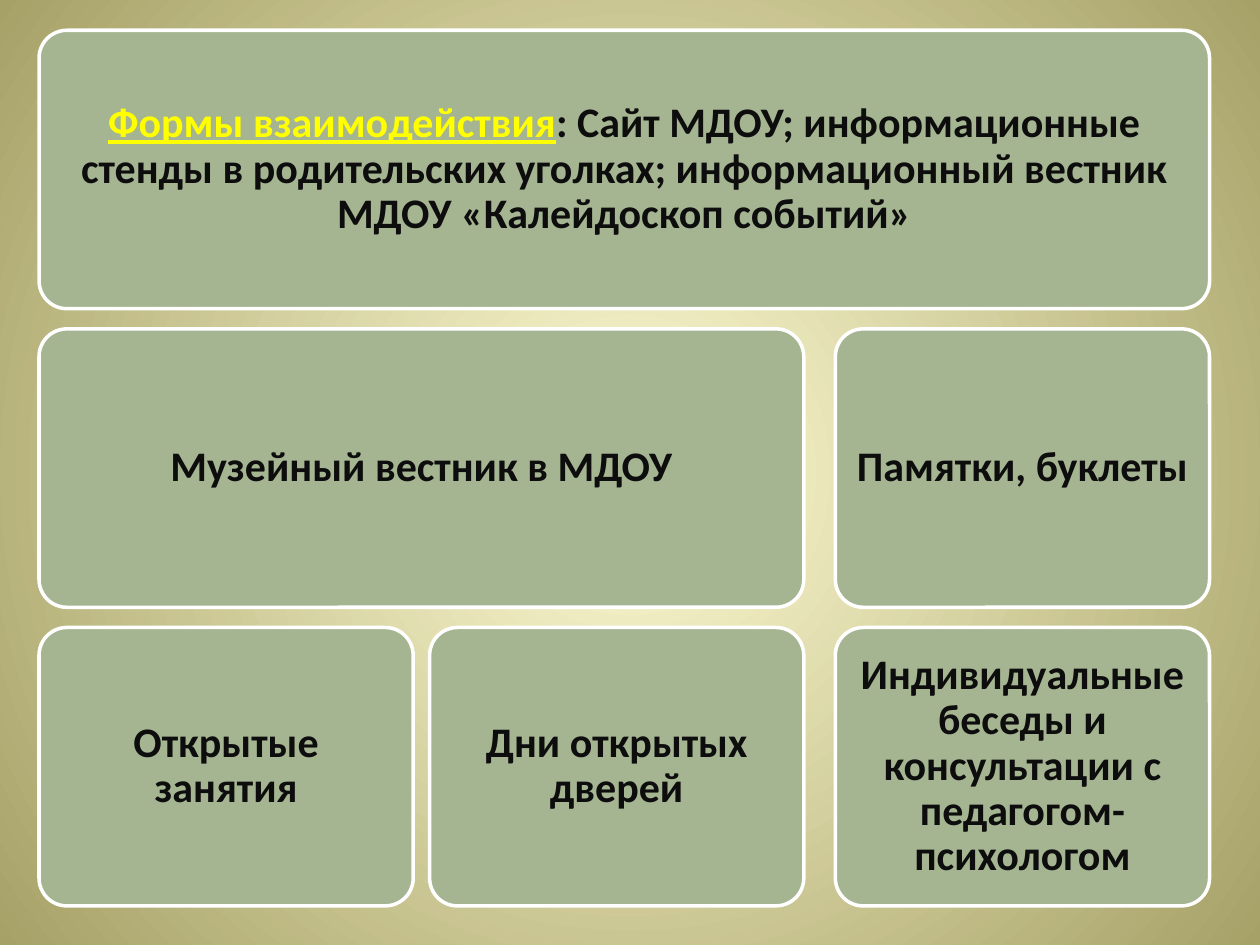
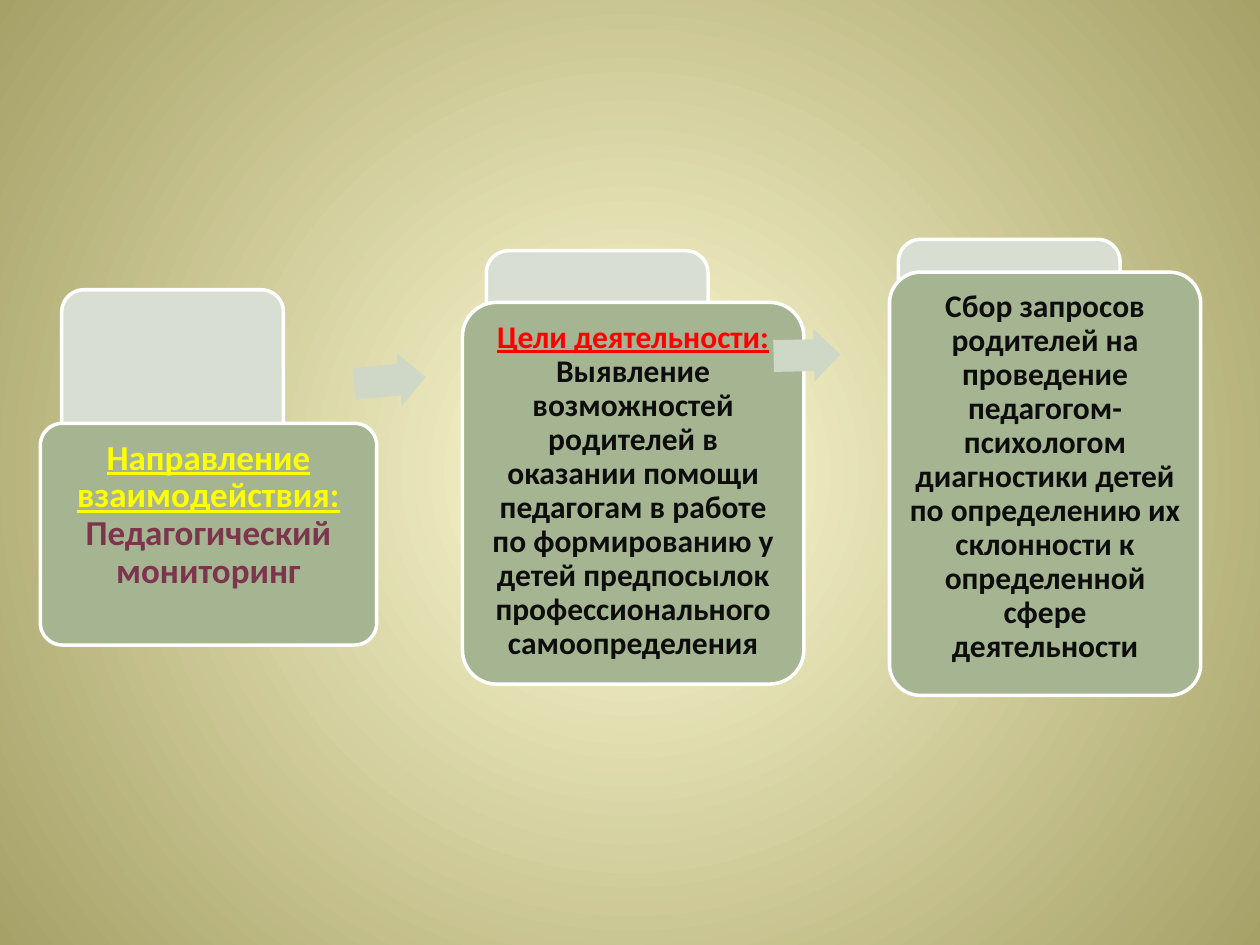
"""Build two slides on how a kindergarten works with parents."""
from dataclasses import dataclass

from lxml import etree
from pptx import Presentation
from pptx.dml.color import RGBColor
from pptx.enum.shapes import MSO_SHAPE as SHAPE
from pptx.enum.text import MSO_ANCHOR as ANCHOR, PP_ALIGN as ALIGN
from pptx.oxml.ns import qn
from pptx.util import Pt

PX = 9144


@dataclass(frozen=True)
class Theme:
    font: str = "Calibri"
    glow: str = "FFFCD4"
    edge: str = "A6A167"
    card: str = "A5B592"
    tab: str = "D8DED2"
    arrow: str = "CFD7C7"
    line: str = "FFFFFF"
    ink: str = "0D0D0D"
    yellow: str = "FFFF00"
    red: str = "FF0000"
    plum: str = "7C354D"
    large: int = 24
    medium: int = 20
    small: int = 18


T = Theme()


def add_block(s, kind, box, fill, adj, line=None):
    sp = s.shapes.add_shape(kind, *[v * PX for v in box])
    sp.shadow.inherit = False
    sp.fill.solid()
    sp.fill.fore_color.rgb = RGBColor.from_string(fill)
    for i, value in enumerate(adj):
        sp.adjustments[i] = value
    if line:
        sp.line.color.rgb = RGBColor.from_string(line)
        sp.line.width = Pt(2)
    else:
        sp.line.fill.background()
    return sp


def add_card(s, box, runs, size, inset, anchor):
    tf = add_block(s, SHAPE.ROUNDED_RECTANGLE, box, T.card, [0.1], T.line).text_frame
    frame = {"word_wrap": True, "vertical_anchor": anchor}
    for side in ("left", "top", "right", "bottom"):
        frame[f"margin_{side}"] = inset * PX
    for name, value in frame.items():
        setattr(tf, name, value)
    p = tf.paragraphs[0]
    p.alignment, p.line_spacing = ALIGN.CENTER, 0.9
    for text, color, underline in runs:
        r = p.add_run()
        r.text = text
        style = {"name": T.font, "size": Pt(size), "bold": True, "underline": underline}
        for name, value in style.items():
            setattr(r.font, name, value)
        r.font.color.rgb = RGBColor.from_string(color)


prs = Presentation()
prs.slide_width, prs.slide_height = 1000 * PX, 750 * PX
blank = prs.slide_layouts[6]

master = prs.slide_master
fill = master.background.fill
fill.gradient()
for stop, color in zip(fill.gradient_stops, (T.glow, T.edge)):
    stop.color.rgb = RGBColor.from_string(color)
grad = master.element.find(".//" + qn("p:bg") + "//" + qn("a:gradFill"))
grad.remove(grad.find(qn("a:lin")))
circle = etree.SubElement(grad, qn("a:path"), {"path": "circle"})
etree.SubElement(circle, qn("a:fillToRect"), {side: "50000" for side in "ltrb"})

s = prs.slides.add_slide(blank)
lefts = (31, 341, 663)
card_w, card_h, top, pitch = 297, 221, 24, 237
forms = [
    (0, 0, 2, [("Формы взаимодействия", T.yellow, True),
               (": Сайт МДОУ; информационные стенды в родительских уголках; "
                "информационный вестник МДОУ «Калейдоскоп событий»", T.ink, False)]),
    (1, 0, 1, [("Музейный вестник в МДОУ", T.ink, False)]),
    (2, 0, 0, [("Открытые занятия", T.ink, False)]),
    (2, 1, 1, [("Дни открытых дверей", T.ink, False)]),
    (1, 2, 2, [("Памятки, буклеты", T.ink, False)]),
    (2, 2, 2, [("Индивидуальные беседы и консультации с педагогом-психологом", T.ink, False)]),
]
for row, first, last, runs in forms:
    box = (lefts[first], top + row * pitch, lefts[last] + card_w - lefts[first], card_h)
    add_card(s, box, runs, T.large, 10, ANCHOR.MIDDLE)

s = prs.slides.add_slide(blank)
tab_size = 176
steps = [
    ((49, 230), (32, 336, 267, 176), T.medium, 8, (281, 281, 57, 42), 354.6,
     [("Направление взаимодействия: ", T.yellow, True),
      ("Педагогический мониторинг", T.plum, False)]),
    ((386, 199), (367, 240, 271, 303), T.small, 7, (614, 261, 53, 42), 358.6,
     [("Цели деятельности: ", T.red, True),
      ("Выявление возможностей родителей в оказании помощи педагогам в работе по "
       "формированию у детей предпосылок профессионального самоопределения", T.ink, False)]),
    ((713, 190), (706, 216, 247, 336), T.small, 7, None, 0,
     [("Сбор запросов родителей на проведение педагогом-психологом диагностики детей "
       "по определению их склонности к определенной сфере деятельности", T.ink, False)]),
]
for tab, card, size, inset, arrow, angle, runs in steps:
    add_block(s, SHAPE.ROUNDED_RECTANGLE, (*tab, tab_size, tab_size), T.tab, [0.1], T.line)
    add_card(s, card, runs, size, inset, ANCHOR.TOP)
    if arrow:
        add_block(s, SHAPE.RIGHT_ARROW, arrow, T.arrow, [0.6, 0.5]).rotation = angle

prs.save("out.pptx")
